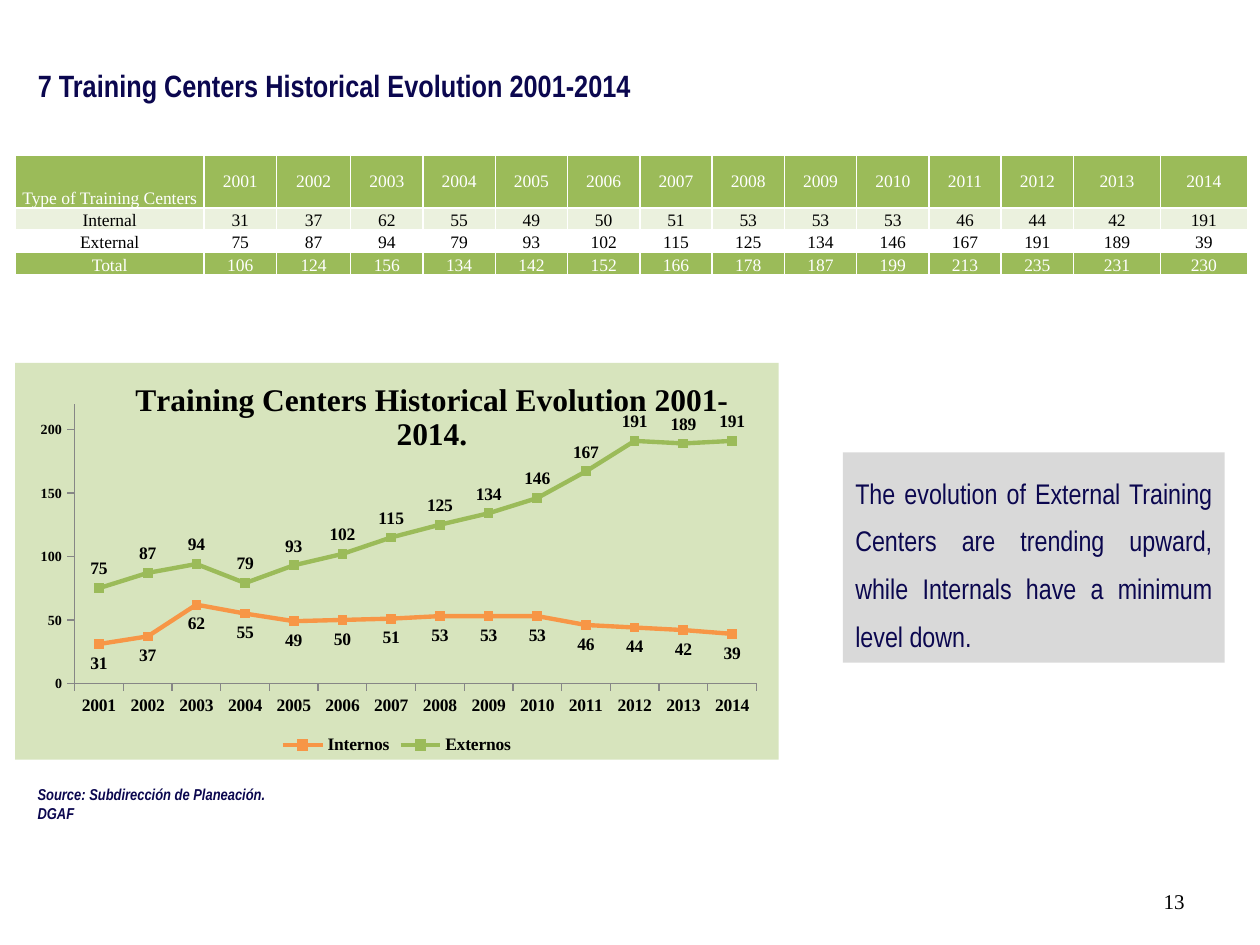
from lxml import etree
from pptx import Presentation
from pptx.chart.data import CategoryChartData
from pptx.dml.color import RGBColor
from pptx.enum.chart import XL_CHART_TYPE, XL_LABEL_POSITION, XL_LEGEND_POSITION, XL_MARKER_STYLE, XL_TICK_MARK
from pptx.enum.shapes import MSO_SHAPE
from pptx.enum.text import MSO_ANCHOR, PP_ALIGN
from pptx.oxml import parse_xml
from pptx.oxml.ns import nsdecls, qn
from pptx.util import Inches, Pt

LEFT, CENTER, RIGHT, JUSTIFY = PP_ALIGN.LEFT, PP_ALIGN.CENTER, PP_ALIGN.RIGHT, PP_ALIGN.JUSTIFY
TOP, MIDDLE, BOTTOM = MSO_ANCHOR.TOP, MSO_ANCHOR.MIDDLE, MSO_ANCHOR.BOTTOM
ABOVE, BELOW = XL_LABEL_POSITION.ABOVE, XL_LABEL_POSITION.BELOW
LINE_MARKERS = XL_CHART_TYPE.LINE_MARKERS
LEGEND_BOTTOM = XL_LEGEND_POSITION.BOTTOM
SQUARE = XL_MARKER_STYLE.SQUARE
OUTSIDE = XL_TICK_MARK.OUTSIDE
RECTANGLE = MSO_SHAPE.RECTANGLE

COLORS = {
    "navy": "0B074F", "green": "9BBB59", "orange": "F79646", "pale": "EBF1DE",
    "panel": "D7E4BD", "gray": "D9D9D9", "axis": "868686", "white": "FFFFFF", "black": "000000",
}
SERIF, NARROW = "Times New Roman", "Arial Narrow"

TITLE = "7 Training Centers Historical Evolution 2001-2014"
COMMENT = ("The evolution of External Training Centers are trending upward, "
           "while Internals have a minimum level down.")
SOURCE = "Source: Subdirección de Planeación. DGAF"
PAGE_NUMBER = "13"
CHART_TITLE = "Training Centers Historical Evolution 2001-2014."

YEARS = [str(year) for year in range(2001, 2015)]
INTERNAL = [31, 37, 62, 55, 49, 50, 51, 53, 53, 53, 46, 44, 42]
EXTERNAL = [75, 87, 94, 79, 93, 102, 115, 125, 134, 146, 167, 191, 189]
TABLE_INTERNAL = INTERNAL + [191]
TABLE_EXTERNAL = EXTERNAL + [39]
TOTALS = [sum(pair) for pair in zip(TABLE_INTERNAL, TABLE_EXTERNAL)]
TABLE_ROWS = [
    (["Type of Training Centers"] + YEARS, 0.42, "green", "white"),
    (["Internal"] + TABLE_INTERNAL, 0.15, "pale", "black"),
    (["External"] + TABLE_EXTERNAL, 0.14, "white", "black"),
    (["Total"] + TOTALS, 0.15, "green", "white"),
]
TABLE_WIDTH = 9.78
SPECIAL_WIDTHS = {0: 1.5, 2: 0.59, 13: 0.69, 14: 0.69}
CHART_SERIES = [
    ("Internos", INTERNAL + [39], "orange", BELOW),
    ("Externos", EXTERNAL + [191], "green", ABOVE),
]


def rgb(name):
    return RGBColor.from_string(COLORS[name])


def style_font(font, name, size, color, bold=False, italic=False):
    font.name, font.size, font.bold, font.italic = name, Pt(size), bold, italic
    font.color.rgb = rgb(color)


def write(shape, text, font, align=LEFT, anchor=MIDDLE, spacing=1.0):
    frame = shape.text_frame
    frame.word_wrap = True
    frame.vertical_anchor = anchor
    para = frame.paragraphs[0]
    para.text = text
    para.alignment = align
    para.line_spacing = spacing
    style_font(para.font, *font)


def place(shape, *bounds):
    shape.left, shape.top, shape.width, shape.height = map(Inches, bounds)


def add_text(slide, bounds, text, font, align=LEFT, anchor=MIDDLE):
    box = slide.shapes.add_textbox(*map(Inches, bounds))
    write(box, text, font, align, anchor)


def add_comment(slide):
    panel = slide.shapes.add_shape(RECTANGLE, *map(Inches, (6.69, 3.59, 3.03, 1.67)))
    panel.shadow.inherit = False
    panel.fill.solid()
    panel.fill.fore_color.rgb = rgb("gray")
    panel.line.fill.background()
    write(panel, COMMENT, (NARROW, 16.2, "navy"), JUSTIFY, spacing=1.4)


def add_borders(cell):
    properties = cell._tc.get_or_add_tcPr()
    for index, side in enumerate(("lnL", "lnR", "lnT", "lnB")):
        properties.insert(index, parse_xml(
            f'<a:{side} {nsdecls("a")} w="12700"><a:solidFill>'
            f'<a:srgbClr val="{COLORS["white"]}"/></a:solidFill></a:{side}>'))


def add_centers_table(slide):
    columns = len(YEARS) + 1
    height = sum(row[1] for row in TABLE_ROWS)
    frame = slide.shapes.add_table(
        len(TABLE_ROWS), columns, *map(Inches, (0.12, 1.23, TABLE_WIDTH, height)))
    table = frame.table
    regular = (TABLE_WIDTH - sum(SPECIAL_WIDTHS.values())) / (columns - len(SPECIAL_WIDTHS))
    for index, column in enumerate(table.columns):
        column.width = Inches(SPECIAL_WIDTHS.get(index, regular))
    for row_index, (values, row_height, fill, color) in enumerate(TABLE_ROWS):
        table.rows[row_index].height = Inches(row_height)
        for column_index, value in enumerate(values):
            cell = table.cell(row_index, column_index)
            cell.margin_left = cell.margin_right = cell.margin_top = Inches(0.01)
            cell.margin_bottom = 0
            cell.vertical_anchor = MIDDLE if row_index == 0 and column_index else BOTTOM
            cell.fill.solid()
            cell.fill.fore_color.rgb = rgb(fill)
            para = cell.text_frame.paragraphs[0]
            para.text = str(value)
            para.alignment = CENTER
            style_font(para.font, SERIF, 10, color)
            add_borders(cell)


def set_layout(parent, position, **values):
    layout = parent.find(qn("c:layout"))
    if layout is None:
        layout = etree.Element(qn("c:layout"))
        parent.insert(position, layout)
    manual = etree.SubElement(layout, qn("c:manualLayout"))
    for tag, value in values.items():
        etree.SubElement(manual, qn(f"c:{tag}")).set("val", str(value))


def add_evolution_chart(slide):
    chart_data = CategoryChartData()
    chart_data.categories = YEARS
    for name, values, _, _ in CHART_SERIES:
        chart_data.add_series(name, values)
    chart = slide.shapes.add_chart(
        LINE_MARKERS, *map(Inches, (0.12, 2.88, 6.06, 3.15)), chart_data).chart
    style_font(chart.font, SERIF, 10, "black")

    chart.has_title = True
    para = chart.chart_title.text_frame.paragraphs[0]
    para.text = CHART_TITLE
    style_font(para.font, SERIF, 18, "black", True)
    title = chart.chart_title._element
    title.find(qn("c:overlay")).set("val", "1")
    set_layout(title, 1, xMode="edge", yMode="edge", x=0.15, y=0.03)

    chart.has_legend = True
    chart.legend.position = LEGEND_BOTTOM
    chart.legend.include_in_layout = False
    style_font(chart.legend.font, SERIF, 10, "black", True)

    for axis, size in ((chart.category_axis, 10), (chart.value_axis, 8)):
        axis.has_major_gridlines = False
        axis.major_tick_mark = OUTSIDE
        axis.format.line.color.rgb = rgb("axis")
        style_font(axis.tick_labels.font, SERIF, size, "black", True)
    chart.value_axis.minimum_scale = 0
    chart.value_axis.maximum_scale = 220
    chart.value_axis.major_unit = 50

    plot = chart.plots[0]
    plot.vary_by_categories = False
    for series, (_, _, color, position) in zip(plot.series, CHART_SERIES):
        series.smooth = False
        series.format.line.color.rgb = rgb(color)
        series.format.line.width = Pt(2.5)
        series.marker.style = SQUARE
        series.marker.size = 5
        series.marker.format.fill.solid()
        series.marker.format.fill.fore_color.rgb = rgb(color)
        series.marker.format.line.color.rgb = rgb(color)
        labels = series.data_labels
        labels.show_value = True
        labels.position = position
        style_font(labels.font, SERIF, 10, "black", True)

    chart_element = chart._chartSpace.find(qn("c:chart"))
    set_layout(chart_element.find(qn("c:plotArea")), 0, layoutTarget="inner",
               xMode="edge", yMode="edge", x=0.078, y=0.104, w=0.893, h=0.704)
    chart_element.addnext(parse_xml(
        f'<c:spPr {nsdecls("c", "a")}><a:solidFill><a:srgbClr val="{COLORS["panel"]}"/>'
        '</a:solidFill><a:ln><a:noFill/></a:ln></c:spPr>'))


def main():
    deck = Presentation()
    deck.slide_width, deck.slide_height = Inches(10), Inches(7.5)
    slide = deck.slides.add_slide(deck.slide_layouts[5])
    add_text(slide, (7.17, 6.95, 2.33, 0.4), PAGE_NUMBER, (SERIF, 12, "black"), RIGHT)
    add_text(slide, (0.2, 6.18, 2.29, 0.4), SOURCE, (NARROW, 9, "navy", True, True), anchor=TOP)
    add_comment(slide)
    place(slide.shapes.title, 0.2, 0.29, 6.46, 0.63)
    write(slide.shapes.title, TITLE, (NARROW, 17.6, "navy", True), spacing=1.5)
    add_evolution_chart(slide)
    add_centers_table(slide)
    deck.save("out.pptx")


if __name__ == "__main__":
    main()
